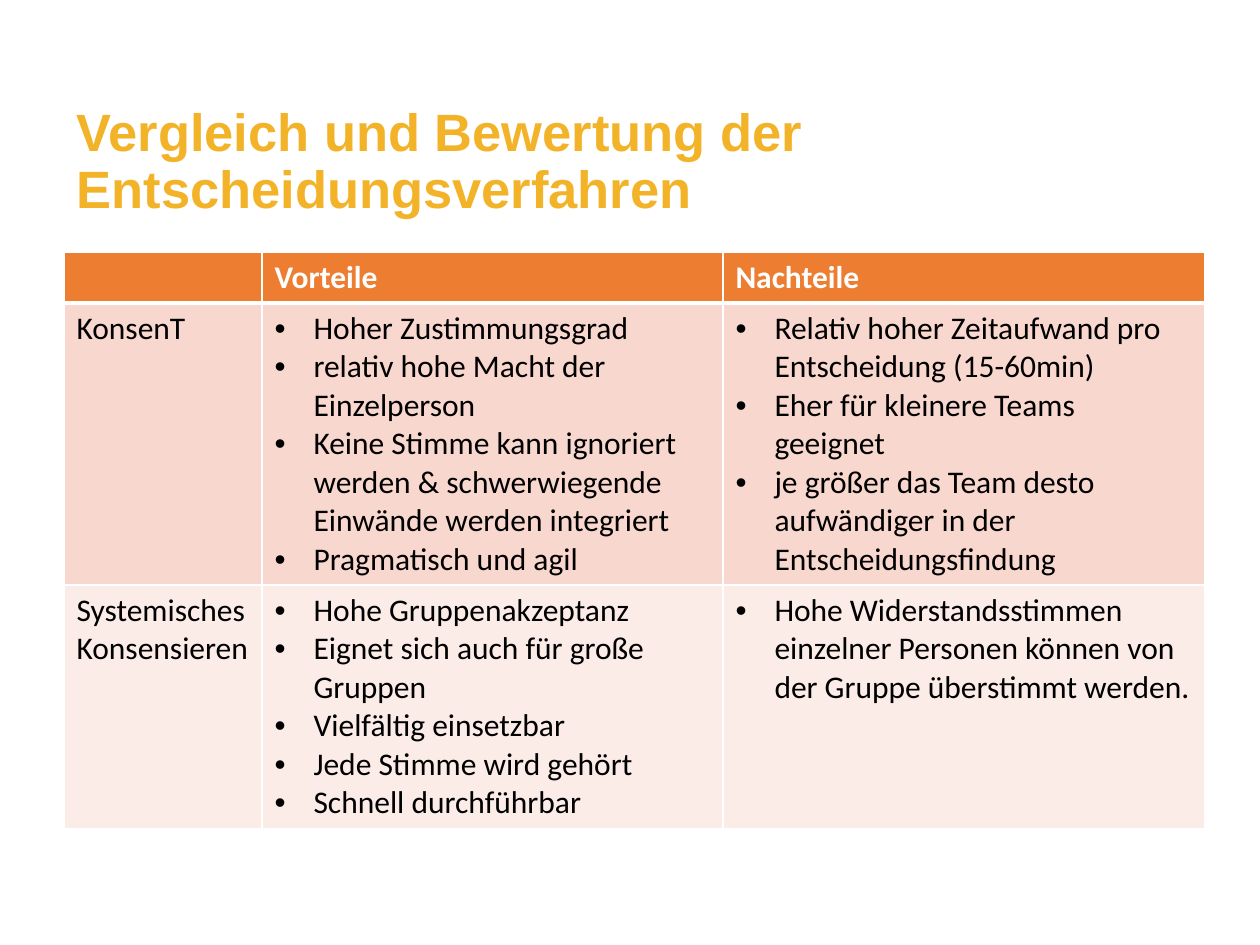
from lxml.etree import SubElement
from pptx import Presentation
from pptx.dml.color import RGBColor
from pptx.enum.text import MSO_ANCHOR, PP_ALIGN
from pptx.oxml.ns import qn
from pptx.util import Pt

PX = 914400 // 126
GOLD = RGBColor(0xF3, 0xB3, 0x29)
ORANGE = RGBColor(0xED, 0x7D, 0x31)
ROSE = RGBColor(0xF8, 0xD7, 0xCE)
PALE_ROSE = RGBColor(0xFC, 0xEC, 0xE8)
WHITE = RGBColor(0xFF, 0xFF, 0xFF)
BLACK = RGBColor(0, 0, 0)

LEFT, WIDTH = 64, 1141
COLUMN_WIDTHS = (198, 461, 482)
ROW_HEIGHTS = (51, 282, 242)
ROW_FILLS = (ORANGE, ROSE, PALE_ROSE)
INDENT = 39
TITLE = "Vergleich und Bewertung der Entscheidungsverfahren"
ROWS = (
    ("", "Vorteile", "Nachteile"),
    (
        "KonsenT",
        [
            "Hoher Zustimmungsgrad",
            "relativ hohe Macht der Einzelperson",
            "Keine Stimme kann ignoriert werden & schwerwiegende Einwände werden integriert",
            "Pragmatisch und agil",
        ],
        [
            "Relativ hoher Zeitaufwand pro Entscheidung (15-60min)",
            "Eher für kleinere Teams geeignet",
            "je größer das Team desto aufwändiger in der Entscheidungsfindung",
        ],
    ),
    (
        "Systemisches Konsensieren",
        [
            "Hohe Gruppenakzeptanz",
            "Eignet sich auch für große Gruppen",
            "Vielfältig einsetzbar",
            "Jede Stimme wird gehört",
            "Schnell durchführbar",
        ],
        ["Hohe Widerstandsstimmen einzelner Personen können von der Gruppe überstimmt werden."],
    ),
)


def px(length):
    """Turn whole pixels into EMU."""
    return length * PX


def format_font(font, name, size, color, bold):
    """Set the look of a font."""
    font.name, font.size, font.bold = name, Pt(size), bold
    font.color.rgb = color


def add_title(page):
    """Place and format the title placeholder."""
    title = page.shapes.title
    title.left, title.top, title.width, title.height = map(px, (LEFT, 100, WIDTH, 100))
    frame = title.text_frame
    frame.text = TITLE
    frame.word_wrap = True
    frame.vertical_anchor = MSO_ANCHOR.TOP
    para = frame.paragraphs[0]
    para.alignment = PP_ALIGN.LEFT
    para.line_spacing = 0.9
    format_font(para.runs[0].font, "Arial", 30, GOLD, True)


def add_bullet(para):
    """Give a paragraph a hanging round bullet."""
    properties = para._p.get_or_add_pPr()
    properties.set("marL", str(px(INDENT)))
    properties.set("indent", str(-px(INDENT)))
    SubElement(properties, qn("a:buFont"), typeface="Arial")
    SubElement(properties, qn("a:buChar"), char="•")


def set_borders(cell, top, bottom):
    """Draw white cell borders, with the top and bottom widths in points."""
    properties = cell._tc.get_or_add_tcPr()
    for index, (side, width) in enumerate((("L", 1), ("R", 1), ("T", top), ("B", bottom))):
        line = properties.makeelement(qn(f"a:ln{side}"), {"w": str(Pt(width))})
        fill = SubElement(line, qn("a:solidFill"))
        SubElement(fill, qn("a:srgbClr"), val=str(WHITE))
        properties.insert(index, line)


def fill_cell(cell, content, row):
    """Write plain text or a bulleted list into a cell and style it."""
    cell.fill.solid()
    cell.fill.fore_color.rgb = ROW_FILLS[row]
    set_borders(cell, 3 if row == 1 else 1, 3 if row == 0 else 1)
    bulleted = isinstance(content, list)
    cell.text_frame.text = "\n".join(content) if bulleted else content
    header = row == 0
    for para in cell.text_frame.paragraphs:
        if bulleted:
            add_bullet(para)
        format_font(para.font, "Calibri", 18, WHITE if header else BLACK, header)
        for span in para.runs:
            format_font(span.font, "Calibri", 18, WHITE if header else BLACK, header)


def add_comparison(page):
    """Add the table of advantages and disadvantages."""
    frame = page.shapes.add_table(
        len(ROWS), len(COLUMN_WIDTHS), px(LEFT), px(252), px(WIDTH), px(sum(ROW_HEIGHTS))
    )
    table = frame.table
    for column, width in zip(table.columns, COLUMN_WIDTHS):
        column.width = px(width)
    for index, (row, height) in enumerate(zip(table.rows, ROW_HEIGHTS)):
        row.height = px(height)
        for cell, content in zip(row.cells, ROWS[index]):
            fill_cell(cell, content, index)


def main():
    """Build the slide and save the deck."""
    deck = Presentation()
    deck.slide_width, deck.slide_height = px(1260), px(945)
    page = deck.slides.add_slide(deck.slide_layouts[5])
    add_title(page)
    add_comparison(page)
    deck.save("out.pptx")


if __name__ == "__main__":
    main()
